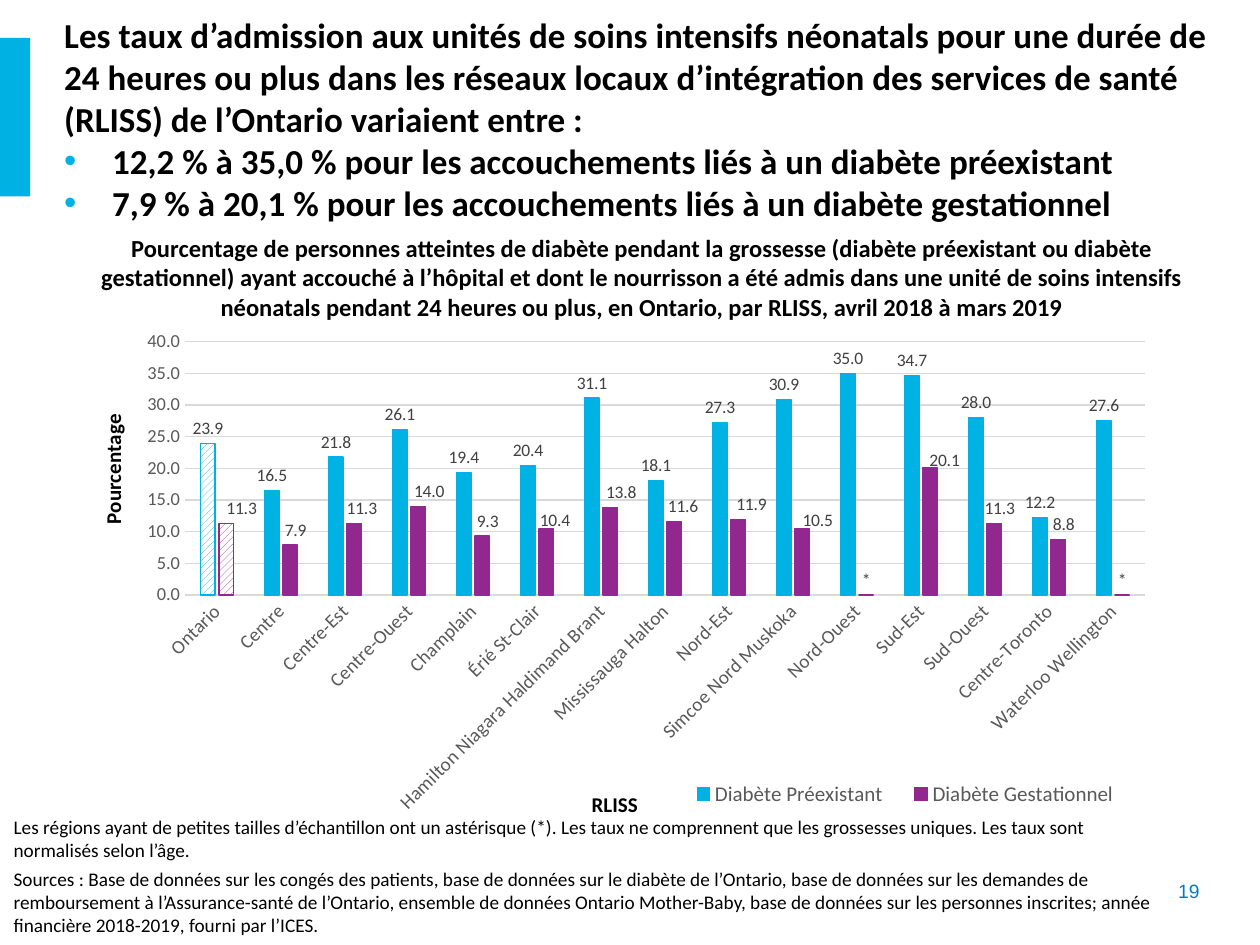
from lxml import etree
from pptx import Presentation
from pptx.chart.data import CategoryChartData
from pptx.dml.color import RGBColor
from pptx.enum.chart import XL_CHART_TYPE, XL_LABEL_POSITION as LABEL, XL_LEGEND_POSITION as LEGEND, XL_TICK_MARK as TICK
from pptx.enum.dml import MSO_PATTERN
from pptx.enum.shapes import MSO_SHAPE
from pptx.enum.text import MSO_ANCHOR, MSO_AUTO_SIZE, PP_ALIGN
from pptx.oxml.ns import qn
from pptx.util import Inches, Pt

BLACK = RGBColor(0x00, 0x00, 0x00)
WHITE = RGBColor(0xFF, 0xFF, 0xFF)
CYAN = RGBColor(0x00, 0xB2, 0xE3)
PURPLE = RGBColor(0x92, 0x27, 0x8F)
BLUE = RGBColor(0x04, 0x7B, 0xC1)
GREY = RGBColor(0x59, 0x59, 0x59)
DARK = RGBColor(0x40, 0x40, 0x40)
PALE = RGBColor(0xD9, 0xD9, 0xD9)


def style(font, size, color, bold=False, name="Calibri"):
    font.size, font.bold, font.name = Pt(size), bold, name
    font.color.rgb = color


def place(parent, index, **values):
    for old in parent.findall(qn("c:layout")):
        parent.remove(old)
    layout = etree.Element(qn("c:layout"))
    manual = etree.SubElement(layout, qn("c:manualLayout"))
    for tag, val in values.items():
        etree.SubElement(manual, qn("c:" + tag)).set("val", str(val))
    parent.insert(index, layout)


prs = Presentation()
prs.slide_width, prs.slide_height = Inches(10), Inches(7.5)
W, H = prs.slide_width, prs.slide_height
slide = prs.slides.add_slide(prs.slide_layouts[5])

sp = slide.shapes.add_shape(MSO_SHAPE.RECTANGLE, 0, int(H * 0.04), int(W * 0.024), int(H * 0.168))
sp.shadow.inherit = False
sp.fill.solid()
sp.fill.fore_color.rgb = CYAN
sp.line.fill.background()

title = slide.shapes.title
title.left, title.top, title.width, title.height = Inches(0.41), Inches(0.05), Inches(9.4), Inches(1.78)
tf = title.text_frame
tf.word_wrap, tf.auto_size, tf.vertical_anchor = True, MSO_AUTO_SIZE.NONE, MSO_ANCHOR.MIDDLE
headline = [
    "Les taux d’admission aux unités de soins intensifs néonatals pour une durée de 24 heures ou plus dans les réseaux locaux d’intégration des services de santé (RLISS) de l’Ontario variaient entre :",
    "12,2 % à 35,0 % pour les accouchements liés à un diabète préexistant",
    "7,9 % à 20,1 % pour les accouchements liés à un diabète gestationnel",
]
for i, text in enumerate(headline):
    p = tf.add_paragraph() if i else tf.paragraphs[0]
    p.alignment = PP_ALIGN.LEFT
    r = p.add_run()
    r.text = text
    style(r.font, 20, BLACK, True)
    if i:
        pPr = p._p.get_or_add_pPr()
        pPr.set("marL", str(Inches(0.38)))
        pPr.set("indent", str(-Inches(0.38)))
        color = etree.SubElement(pPr, qn("a:buClr"))
        etree.SubElement(color, qn("a:srgbClr")).set("val", str(CYAN))
        etree.SubElement(pPr, qn("a:buFont")).set("typeface", "Arial")
        etree.SubElement(pPr, qn("a:buChar")).set("char", "•")

boxes = [
    (0.046, 0.24, 0.927, 0.108, 14, BLACK, True, "Calibri", PP_ALIGN.CENTER, 0, [
        "Pourcentage de personnes atteintes de diabète pendant la grossesse (diabète préexistant ou diabète gestationnel) ayant accouché à l’hôpital et dont le nourrisson a été admis dans une unité de soins intensifs néonatals pendant 24 heures ou plus, en Ontario, par RLISS, avril 2018 à mars 2019"]),
    (0.001, 0.856, 0.94, 0.095, 11, BLACK, False, "Calibri", PP_ALIGN.LEFT, 3.3, [
        "Les régions ayant de petites tailles d’échantillon ont un astérisque (*). Les taux ne comprennent que les grossesses uniques. Les taux sont normalisés selon l’âge.",
        "Sources : Base de données sur les congés des patients, base de données sur le diabète de l’Ontario, base de données sur les demandes de remboursement à l’Assurance-santé de l’Ontario, ensemble de données Ontario Mother-Baby, base de données sur les personnes inscrites; année financière 2018-2019, fourni par l’ICES."]),
    (0.845, 0.924, 0.117, 0.039, 11, BLUE, False, "Arial", PP_ALIGN.RIGHT, 5.5, ["19"]),
]
for x, y, w, h, size, color, bold, font, align, before, texts in boxes:
    tf = slide.shapes.add_textbox(int(W * x), int(H * y), int(W * w), int(H * h)).text_frame
    tf.word_wrap = True
    for i, text in enumerate(texts):
        p = tf.add_paragraph() if i else tf.paragraphs[0]
        p.alignment, p.space_before = align, Pt(before)
        r = p.add_run()
        r.text = text
        style(r.font, size, color, bold, font)

data = CategoryChartData(number_format="0.0")
data.categories = [
    "Ontario", "Centre", "Centre-Est", "Centre-Ouest", "Champlain", "Érié St-Clair",
    "Hamilton Niagara Haldimand Brant", "Mississauga Halton", "Nord-Est", "Simcoe Nord Muskoka",
    "Nord-Ouest", "Sud-Est", "Sud-Ouest", "Centre-Toronto", "Waterloo Wellington"]
gestational = [11.3, 7.9, 11.3, 14, 9.3, 10.4, 13.8, 11.6, 11.9, 10.5, 0, 20.1, 11.3, 8.8, 0]
data.add_series("Diabète Préexistant",
                [23.9, 16.5, 21.8, 26.1, 19.4, 20.4, 31.1, 18.1, 27.3, 30.9, 35, 34.7, 28, 12.2, 27.6])
data.add_series("Diabète Gestationnel", gestational)
chart = slide.shapes.add_chart(XL_CHART_TYPE.COLUMN_CLUSTERED, Inches(0.49), Inches(2.59),
                               Inches(8.81), Inches(3.97), data).chart
style(chart.font, 10, BLACK)
chart.has_title = False
place(chart._chartSpace.chart.plotArea, 0, layoutTarget="inner", xMode="edge", yMode="edge",
      x=0.111, y=0.031, w=0.865, h=0.506)

chart.has_legend = True
legend = chart.legend
legend.position, legend.include_in_layout = LEGEND.BOTTOM, False
style(legend.font, 12, GREY)
place(legend._element, 1, xMode="edge", yMode="edge", x=0.55, y=0.9, w=0.42, h=0.07)

cat, val = chart.category_axis, chart.value_axis
axes = [(cat, "RLISS", 11, -45, 0, 0.474, 0.92), (val, "Pourcentage", 10.5, 0, -90, 0.03, 0.168)]
for axis, text, size, turn, title_turn, x, y in axes:
    axis.major_tick_mark = axis.minor_tick_mark = TICK.NONE
    style(axis.tick_labels.font, size, GREY)
    axis._element.find(qn("c:txPr")).find(qn("a:bodyPr")).set("rot", str(turn * 60000))
    tf = axis.axis_title.text_frame
    r = tf.paragraphs[0].add_run()
    r.text = text
    style(r.font, 12, BLACK, True)
    tf._txBody.find(qn("a:bodyPr")).set("rot", str(title_turn * 60000))
    place(axis.axis_title._element, 1, xMode="edge", yMode="edge", x=x, y=y)
val.minimum_scale, val.maximum_scale, val.major_unit = 0, 40, 5
val.tick_labels.number_format, val.tick_labels.number_format_is_linked = "0.0", False
val.format.line.fill.background()
val.has_major_gridlines = True
for line in (cat.format.line, val.major_gridlines.format.line):
    line.color.rgb, line.width = PALE, Pt(0.75)

plot = chart.plots[0]
plot.gap_width, plot.overlap, plot.vary_by_categories = 219, -27, False
for series, color in zip(plot.series, (CYAN, PURPLE)):
    series.invert_if_negative = False
    series.format.fill.solid()
    series.format.fill.fore_color.rgb = color
    fill = series.points[0].format.fill
    fill.patterned()
    fill.pattern = MSO_PATTERN.WIDE_UPWARD_DIAGONAL
    fill.fore_color.rgb, fill.back_color.rgb = color, WHITE
    for line in (series.format.line, series.points[0].format.line):
        line.color.rgb, line.width = color, Pt(0.75)
    labels = series.data_labels
    labels.show_value, labels.position = True, LABEL.OUTSIDE_END
    labels.number_format, labels.number_format_is_linked = "0.0", False
    style(labels.font, 10, DARK)

shifts = [0.014, 0.005, 0.007, 0.01, 0.005, 0.008, 0.01, 0.008, 0.012, 0.014, 0, 0.013, 0.005, 0.005, 0]
drops = {5: 0.013, 9: 0.013, 11: 0.016}
for i, (value, shift) in enumerate(zip(gestational, shifts)):
    label = plot.series[1].points[i].data_label
    if value:
        style(label.font, 10, DARK)
    else:
        r = label.text_frame.paragraphs[0].add_run()
        r.text = "*"
        style(r.font, 10, DARK)
    label.position = LABEL.OUTSIDE_END
    if shift:
        place(label._get_or_add_dLbl(), 1, x=shift, y=drops.get(i, 0))

prs.save("out.pptx")
